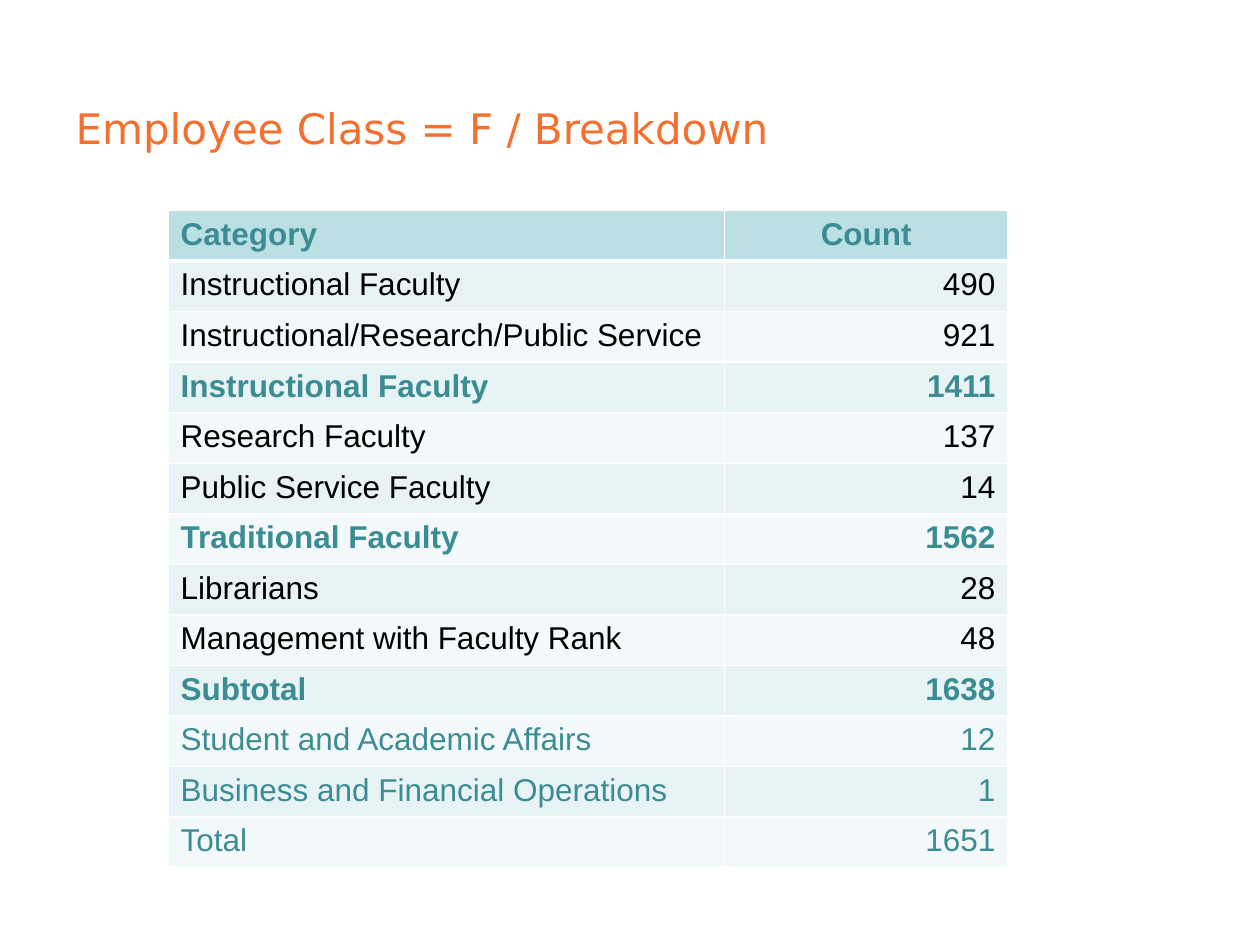
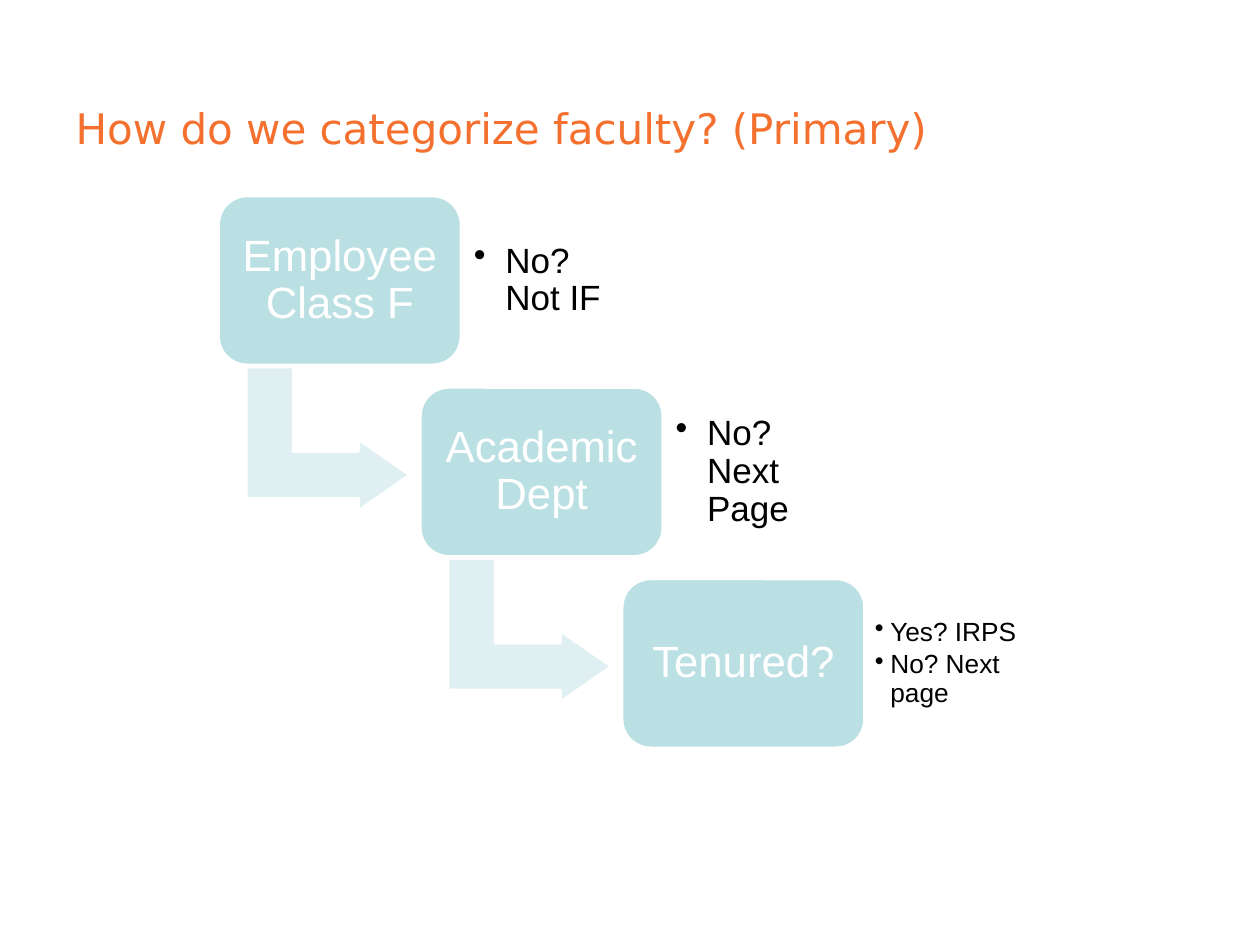
"""Builds two slides on how faculty are counted and categorized."""
from dataclasses import dataclass

from lxml.etree import SubElement
from pptx import Presentation
from pptx.dml.color import RGBColor
from pptx.enum.shapes import MSO_SHAPE
from pptx.enum.text import MSO_ANCHOR, PP_ALIGN
from pptx.oxml import parse_xml
from pptx.oxml.ns import nsdecls, qn
from pptx.util import Pt

ORANGE = RGBColor(0xF4, 0x70, 0x2F)
TEAL = RGBColor(0x3C, 0x8C, 0x93)
AQUA = RGBColor(0xBB, 0xE0, 0xE3)
PALE_AQUA = RGBColor(0xE0, 0xF0, 0xF2)
BAND_DARK = RGBColor(0xE7, 0xF3, 0xF4)
BAND_LIGHT = RGBColor(0xF3, 0xF9, 0xFA)
BLACK = RGBColor(0, 0, 0)
WHITE = RGBColor(0xFF, 0xFF, 0xFF)

TITLE_FONT = "DejaVu Sans"
BODY_FONT = "Arial"
TITLE_ONLY = 5

ROW_HEIGHT = 28.9
COLUMN_WIDTHS = (318, 162)

STEP_LEFT, STEP_TOP = 124.7, 111.8
STEP_RIGHT, STEP_DOWN = 115.3, 109.4
STEP_WIDTH, STEP_HEIGHT = 139, 97


@dataclass(frozen=True)
class Count:
    category: str
    count: str
    color: RGBColor = BLACK
    bold: bool = False


@dataclass(frozen=True)
class Step:
    question: str
    answers: tuple[str, ...]
    size: float = 20
    indent: float = 18
    inset: float = 7.2


COUNTS = (
    Count("Category", "Count", TEAL, True),
    Count("Instructional Faculty", "490"),
    Count("Instructional/Research/Public Service", "921"),
    Count("Instructional Faculty", "1411", TEAL, True),
    Count("Research Faculty", "137"),
    Count("Public Service Faculty", "14"),
    Count("Traditional Faculty", "1562", TEAL, True),
    Count("Librarians", "28"),
    Count("Management with Faculty Rank", "48"),
    Count("Subtotal", "1638", TEAL, True),
    Count("Student and Academic Affairs", "12", TEAL),
    Count("Business and Financial Operations", "1", TEAL),
    Count("Total", "1651", TEAL),
)

STEPS = (
    Step("Employee Class F", ("No? Not IF",)),
    Step("Academic Dept", ("No? Next Page",)),
    Step("Tenured?", ("Yes? IRPS", "No? Next page"), 15, 8.8, 5.7),
)


def write_text(frame, *lines: str, size: float, color: RGBColor, font: str = BODY_FONT,
               bold: bool = False, align=PP_ALIGN.LEFT, spacing: float | None = None,
               after: float | None = None, bullet_indent: float = 0) -> None:
    for position, line in enumerate(lines):
        paragraph = frame.add_paragraph() if position else frame.paragraphs[0]
        paragraph.alignment = align
        if spacing:
            paragraph.line_spacing = spacing
        if after is not None:
            paragraph.space_after = Pt(after)
        if bullet_indent:
            properties = paragraph._p.get_or_add_pPr()
            properties.set("marL", str(Pt(bullet_indent)))
            properties.set("indent", str(-Pt(bullet_indent)))
            SubElement(properties, qn("a:buChar"), char="•")
        run = paragraph.add_run()
        run.text = line
        run.font.name = font
        run.font.size = Pt(size)
        run.font.bold = bold
        run.font.color.rgb = color


def set_frame(frame, inset: float) -> None:
    frame.word_wrap = True
    frame.vertical_anchor = MSO_ANCHOR.MIDDLE
    frame.margin_left = frame.margin_right = Pt(inset)
    frame.margin_top = frame.margin_bottom = Pt(inset)


def add_titled_slide(deck, heading: str):
    slide = deck.slides.add_slide(deck.slide_layouts[TITLE_ONLY])
    title = slide.shapes.title
    title.left, title.top, title.width, title.height = Pt(36), Pt(54), Pt(660), Pt(37.4)
    title.text_frame.vertical_anchor = MSO_ANCHOR.MIDDLE
    write_text(title.text_frame, heading, size=24, color=ORANGE, font=TITLE_FONT)
    return slide


def set_borders(cell, top: float, bottom: float) -> None:
    properties = cell._tc.get_or_add_tcPr()
    for position, (side, width) in enumerate(zip("LRTB", (1, 1, top, bottom))):
        properties.insert(position, parse_xml(
            f'<a:ln{side} {nsdecls("a")} w="{Pt(width)}"><a:solidFill>'
            f'<a:srgbClr val="{WHITE}"/></a:solidFill></a:ln{side}>'))


def add_count_table(slide) -> None:
    table = slide.shapes.add_table(
        len(COUNTS), len(COLUMN_WIDTHS), Pt(96), Pt(120.3),
        Pt(sum(COLUMN_WIDTHS)), Pt(ROW_HEIGHT * len(COUNTS))).table
    for column, width in zip(table.columns, COLUMN_WIDTHS):
        column.width = Pt(width)
    for number, entry in enumerate(COUNTS):
        table.rows[number].height = Pt(ROW_HEIGHT)
        band = BAND_DARK if number % 2 else BAND_LIGHT
        count_align = PP_ALIGN.RIGHT if number else PP_ALIGN.CENTER
        texts = ((entry.category, PP_ALIGN.LEFT), (entry.count, count_align))
        for column, (text, align) in enumerate(texts):
            cell = table.cell(number, column)
            cell.fill.solid()
            cell.fill.fore_color.rgb = band if number else AQUA
            set_borders(cell, top=3 if number == 1 else 1, bottom=1 if number else 3)
            write_text(cell.text_frame, text, size=18, color=entry.color,
                       bold=entry.bold, align=align)


def add_filled_shape(slide, preset, left: float, top: float, width: float, height: float,
                     fill: RGBColor, adjustments: tuple[float, ...]):
    shape = slide.shapes.add_shape(preset, Pt(left), Pt(top), Pt(width), Pt(height))
    shape.shadow.inherit = False
    shape.fill.solid()
    shape.fill.fore_color.rgb = fill
    shape.line.color.rgb = WHITE
    shape.line.width = Pt(2)
    for position, value in enumerate(adjustments):
        shape.adjustments[position] = value
    return shape


def add_step(slide, number: int, step: Step) -> None:
    left = STEP_LEFT + number * STEP_RIGHT
    top = STEP_TOP + number * STEP_DOWN
    if number < len(STEPS) - 1:
        arrow = add_filled_shape(slide, MSO_SHAPE.BENT_UP_ARROW, left + 21.5, top + 92,
                                 82.6, 94, PALE_AQUA, (0.33, 0.25, 0.36))
        arrow.rotation = 90
    box = add_filled_shape(slide, MSO_SHAPE.ROUNDED_RECTANGLE, left, top,
                           STEP_WIDTH, STEP_HEIGHT, AQUA, (0.17,))
    set_frame(box.text_frame, 7.2)
    write_text(box.text_frame, step.question, size=25, color=WHITE,
               align=PP_ALIGN.CENTER, spacing=0.9)
    answers = slide.shapes.add_textbox(Pt(left + STEP_WIDTH), Pt(top + 9.3),
                                       Pt(101.2), Pt(78.5)).text_frame
    set_frame(answers, step.inset)
    write_text(answers, *step.answers, size=step.size, color=BLACK, spacing=0.9,
               after=step.size * 0.15, bullet_indent=step.indent)


def main() -> None:
    deck = Presentation()
    deck.slide_width, deck.slide_height = Pt(720), Pt(540)
    add_count_table(add_titled_slide(deck, "Employee Class = F / Breakdown"))
    steps_slide = add_titled_slide(deck, "How do we categorize faculty? (Primary)")
    for number, step in enumerate(STEPS):
        add_step(steps_slide, number, step)
    deck.save("out.pptx")


if __name__ == "__main__":
    main()
